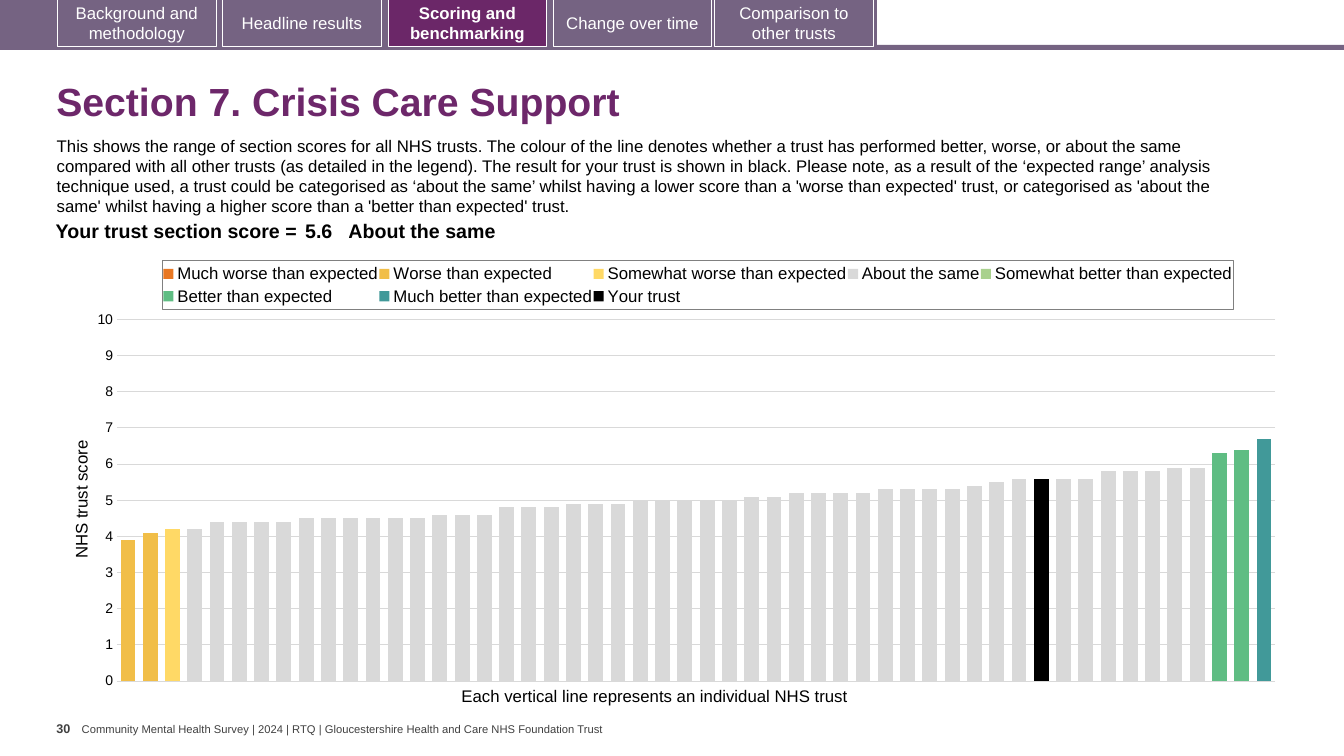
from copy import deepcopy
from dataclasses import dataclass

from pptx import Presentation
from pptx import util as u
from pptx.chart import data as chart_data
from pptx.dml import color
from pptx.enum import chart as charts, shapes, text
from pptx.oxml import ns, parse_xml


@dataclass(frozen=True)
class Theme:
    font: str = "Arial"
    title: str = "6D276A"
    active: str = "6B2768"
    tab: str = "756382"
    white: str = "FFFFFF"
    black: str = "000000"
    footer: str = "404040"
    grid: str = "D9D9D9"
    legend_line: str = "808080"
    title_size: float = 28
    score_size: float = 14
    body_size: float = 12
    axis_size: float = 10
    page_size: float = 9
    footer_size: float = 8


THEME = Theme()
TABS = (
    ("Background and methodology", 1.45),
    ("Headline results", 5.61),
    ("Scoring and benchmarking", 9.78),
    ("Change over time", 13.94),
    ("Comparison to other trusts", 18.01),
)
ACTIVE_TAB = "Scoring and benchmarking"
INTRO = (
    "This shows the range of section scores for all NHS trusts. The colour of the line denotes "
    "whether a trust has performed better, worse, or about the same compared with all other trusts "
    "(as detailed in the legend). The result for your trust is shown in black. Please note, as a "
    "result of the ‘expected range’ analysis technique used, a trust could be categorised as "
    "‘about the same’ whilst having a lower score than a 'worse than expected' trust, or "
    "categorised as 'about the same' whilst having a higher score than a 'better than expected' trust."
)
FOOTER = "Community Mental Health Survey | 2024 | RTQ | Gloucestershire Health and Care NHS Foundation Trust"
SCORES = (
    3.9, 4.1, 4.2, 4.2, 4.4, 4.4, 4.4, 4.4, 4.5, 4.5, 4.5, 4.5, 4.5,
    4.5, 4.6, 4.6, 4.6, 4.8, 4.8, 4.8, 4.9, 4.9, 4.9, 5, 5, 5,
    5, 5, 5.1, 5.1, 5.2, 5.2, 5.2, 5.2, 5.3, 5.3, 5.3, 5.3, 5.4,
    5.5, 5.6, 5.6, 5.6, 5.6, 5.8, 5.8, 5.8, 5.9, 5.9, 6.3, 6.4, 6.7,
)
BANDS = (
    ("Much worse than expected", "E87722", range(0)),
    ("Worse than expected", "F1BE48", range(0, 2)),
    ("Somewhat worse than expected", "FFD966", range(2, 3)),
    ("About the same", "D9D9D9", range(3, 49)),
    ("Somewhat better than expected", "A9D18E", range(0)),
    ("Better than expected", "5FBD83", range(49, 51)),
    ("Much better than expected", "419999", range(51, 52)),
    ("Your trust", "000000", range(41, 42)),
)


def apply(target, values):
    for name, value in values.items():
        setattr(target, name, value)


def set_font(font, size, ink=THEME.black, bold=False):
    apply(font, {"name": THEME.font, "size": u.Pt(size), "bold": bold})
    font.color.rgb = color.RGBColor.from_string(ink)


def set_fill(fill, ink):
    fill.solid()
    fill.fore_color.rgb = color.RGBColor.from_string(ink)


def set_line(line, ink):
    line.color.rgb = color.RGBColor.from_string(ink)
    line.width = u.Pt(0.75)


def write(frame, words, size, ink=THEME.black, bold=False, align=text.PP_ALIGN.LEFT, spacing=None):
    para = frame.paragraphs[0]
    apply(para, {"alignment": align, "line_spacing": spacing})
    span = para.add_run()
    span.text = words
    set_font(span.font, size, ink, bold)


def add_text(page, place, words, size, ink=THEME.black, bold=False, spacing=None, **frame_format):
    box = page.shapes.add_textbox(*map(u.Cm, place))
    apply(box.text_frame, {"word_wrap": True, **frame_format})
    write(box.text_frame, words, size, ink, bold, spacing=spacing)


def add_block(page, place, ink):
    block = page.shapes.add_shape(shapes.MSO_SHAPE.RECTANGLE, *map(u.Cm, place))
    block.shadow.inherit = False
    set_fill(block.fill, ink)
    block.line.fill.background()
    return block


def add_tab(page, label, left):
    active = label == ACTIVE_TAB
    tab = add_block(page, (left, -0.02, 4, 1.2), THEME.active if active else THEME.tab)
    set_line(tab.line, THEME.white)
    apply(tab.text_frame, {"word_wrap": True, "vertical_anchor": text.MSO_ANCHOR.MIDDLE})
    write(tab.text_frame, label, THEME.body_size, THEME.white, active, text.PP_ALIGN.CENTER)


def add_score(page):
    columns = (
        ("Your trust section score =", 6.68, 0.1, text.PP_ALIGN.RIGHT),
        ("5.6", 1.19, 0.1, text.PP_ALIGN.LEFT),
        ("About the same", 21.82, 0, text.PP_ALIGN.LEFT),
    )
    place = map(u.Cm, (0.91, 5.46, 29.69, 0.79))
    table = page.shapes.add_table(1, len(columns), *place).table
    apply(table, {"first_row": False, "horz_banding": False})
    for index, (words, width, inset, align) in enumerate(columns):
        table.columns[index].width = u.Cm(width)
        cell = table.cell(0, index)
        cell.fill.background()
        apply(cell, {
            "margin_left": u.Cm(inset), "margin_right": u.Cm(inset),
            "margin_top": u.Cm(0.1), "margin_bottom": u.Cm(0.1),
        })
        write(cell.text_frame, words, THEME.score_size, bold=True, align=align)


def set_layout(parent, position, **shares):
    for old in parent.findall(ns.qn("c:layout")):
        parent.remove(old)
    target = '<c:layoutTarget val="inner"/>' if position == 0 else ""
    modes = '<c:xMode val="edge"/><c:yMode val="edge"/>'
    sizes = "".join(f'<c:{name} val="{share}"/>' for name, share in shares.items())
    parent.insert(position, parse_xml(
        f'<c:layout {ns.nsdecls("c")}><c:manualLayout>{target}{modes}{sizes}</c:manualLayout></c:layout>'
    ))


def format_legend(chart):
    chart.has_legend = True
    legend = chart.legend
    apply(legend, {"position": charts.XL_LEGEND_POSITION.TOP, "include_in_layout": False})
    set_font(legend.font, THEME.body_size)
    set_layout(legend._element, 1, x=0.077, y=0.026, w=0.875, h=0.11)
    legend._element.find(ns.qn("c:txPr")).addprevious(parse_xml(
        f'<c:spPr {ns.nsdecls("c", "a")}><a:ln w="9525"><a:solidFill>'
        f'<a:srgbClr val="{THEME.legend_line}"/></a:solidFill></a:ln></c:spPr>'
    ))


def format_value_axis(axis):
    apply(axis, {
        "minimum_scale": 0, "maximum_scale": 10, "major_unit": 1,
        "major_tick_mark": charts.XL_TICK_MARK.NONE, "has_major_gridlines": True,
    })
    set_font(axis.tick_labels.font, THEME.axis_size)
    axis.format.line.fill.background()
    set_line(axis.major_gridlines.format.line, THEME.grid)
    title = axis.axis_title
    write(title.text_frame, "NHS trust score", THEME.body_size)
    body = title.text_frame._txBody.find(ns.qn("a:bodyPr"))
    body.set("rot", "-5400000")
    body.set("vert", "horz")
    set_layout(title._element, 1, x=0, y=0.421)


def move_last_series_right(chart):
    area = chart._chartSpace.chart.plotArea
    left_bars = area.find(ns.qn("c:barChart"))
    right_bars = deepcopy(left_bars)
    left_bars.remove(left_bars.findall(ns.qn("c:ser"))[-1])
    for series in right_bars.findall(ns.qn("c:ser"))[:-1]:
        right_bars.remove(series)
    left_bars.addnext(right_bars)
    category, value = (deepcopy(axis._element) for axis in (chart.category_axis, chart.value_axis))
    for name in ("c:title", "c:majorGridlines"):
        value.remove(value.find(ns.qn(name)))
    chart.value_axis._element.addnext(value)
    value.addnext(category)
    numbers = {category.find(ns.qn("c:axId")).get("val"): "5001",
               value.find(ns.qn("c:axId")).get("val"): "5002"}
    for group in (right_bars, category, value):
        for name in ("c:axId", "c:crossAx"):
            for link in group.findall(ns.qn(name)):
                link.set("val", numbers[link.get("val")])
    settings = {"c:axPos": "r", "c:majorTickMark": "out", "c:tickLblPos": "none", "c:crosses": "max"}
    for name, setting in settings.items():
        value.find(ns.qn(name)).set("val", setting)


def add_scores_chart(page):
    data = chart_data.CategoryChartData()
    data.categories = [str(number) for number in range(1, len(SCORES) + 1)]
    for name, _, members in BANDS:
        data.add_series(name, [score if i in members else None for i, score in enumerate(SCORES)])
    place = map(u.Cm, (1.71, 6.27, 30.86, 11.28))
    chart = page.shapes.add_chart(charts.XL_CHART_TYPE.COLUMN_CLUSTERED, *place, data).chart
    chart.has_title = False
    set_font(chart.font, THEME.axis_size)
    plot = chart.plots[0]
    apply(plot, {"gap_width": 50, "overlap": 100, "vary_by_categories": False})
    for series, (_, ink, _) in zip(plot.series, BANDS):
        set_fill(series.format.fill, ink)
    chart.category_axis.visible = False
    format_value_axis(chart.value_axis)
    format_legend(chart)
    move_last_series_right(chart)
    set_layout(chart._chartSpace.chart.plotArea, 0, x=0.04, y=0.158, w=0.946, h=0.808)


def main():
    deck = Presentation()
    apply(deck, {"slide_width": u.Cm(33.87), "slide_height": u.Cm(19.05)})
    page = deck.slides.add_slide(deck.slide_layouts[6])
    flush = {"word_wrap": False, "margin_left": 0, "margin_right": 0}
    middle = {"vertical_anchor": text.MSO_ANCHOR.MIDDLE}
    add_text(page, (2.06, 18.2, 13.31, 0.33), FOOTER, THEME.footer_size, THEME.footer,
             margin_top=0, margin_bottom=0, **flush, **middle)
    for place in ((0, 1.13, 33.87, 0.13), (0, 0, 22.1, 1.19)):
        add_block(page, place, THEME.tab)
    for label, left in TABS:
        add_tab(page, label, left)
    add_text(page, (1.17, 1.7, 31.72, 1.83), "Section 7. Crisis Care Support", THEME.title_size,
             THEME.title, True, 0.9, **middle)
    add_text(page, (1.42, 18.03, 0.64, 1.02), "30", THEME.page_size, THEME.footer, True, **flush)
    add_text(page, (1.18, 3.29, 30.81, 2.31), INTRO, THEME.body_size)
    add_text(page, (11.38, 17.15, 10.44, 0.76), "Each vertical line represents an individual NHS trust",
             THEME.body_size, word_wrap=False)
    add_scores_chart(page)
    add_score(page)
    deck.save("out.pptx")


if __name__ == "__main__":
    main()
